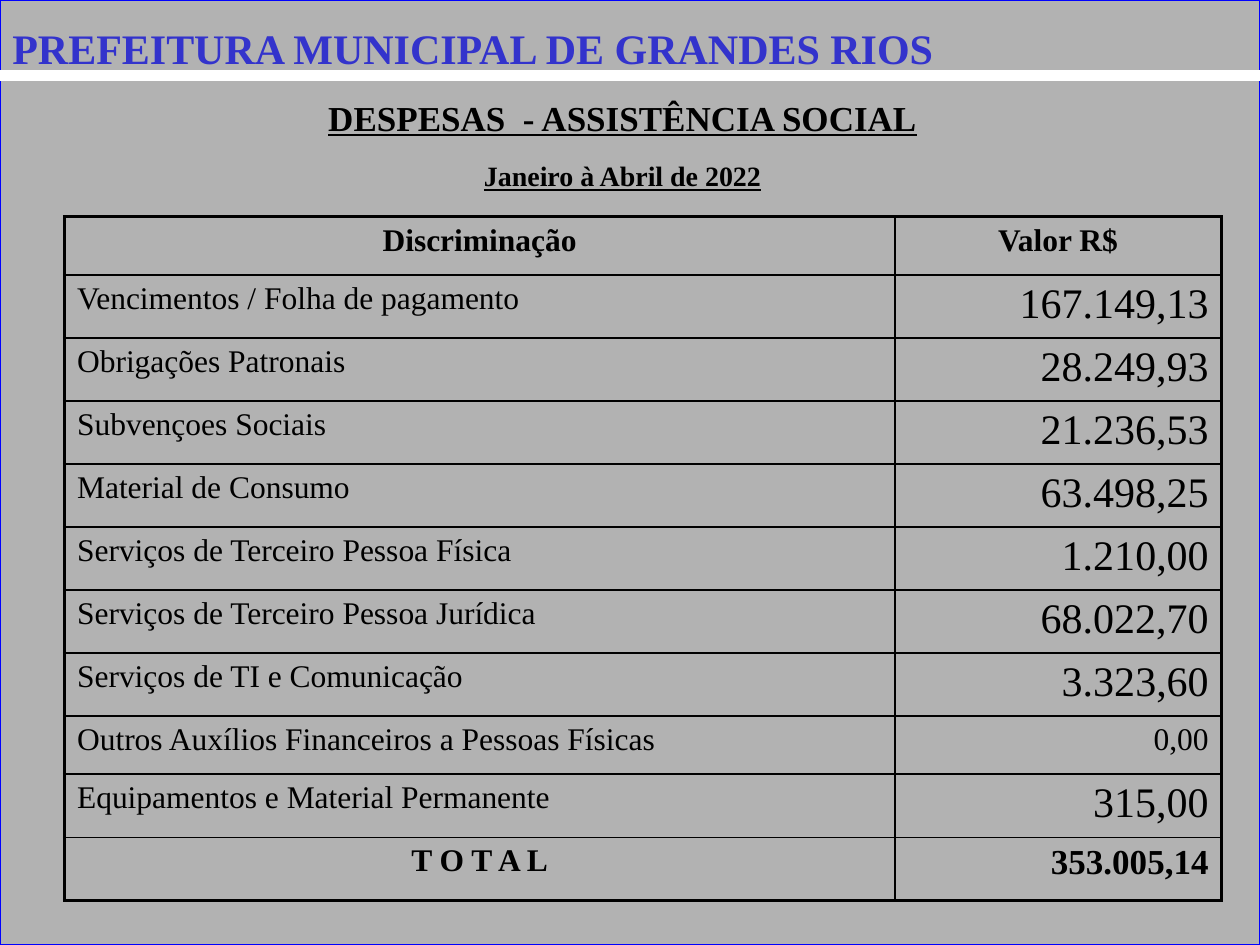
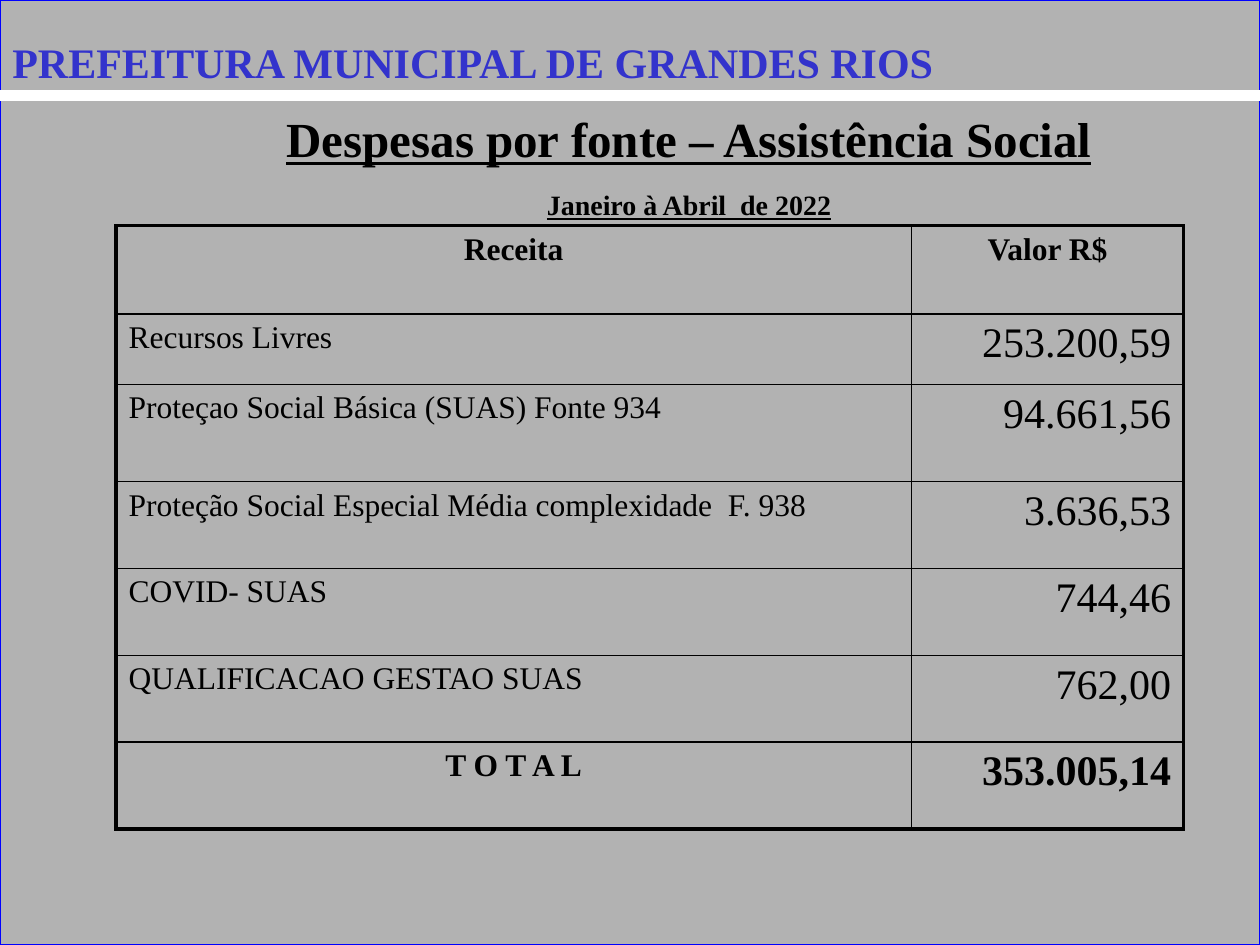
from lxml.etree import SubElement as Sub
from pptx import Presentation
from pptx.dml.color import RGBColor as RGB
from pptx.enum.shapes import MSO_CONNECTOR as LINK, MSO_SHAPE as SHAPE
from pptx.enum.text import MSO_ANCHOR as ANCHOR, MSO_AUTO_SIZE as FIT, PP_ALIGN as ALIGN
from pptx.oxml.ns import qn
from pptx.util import Cm, Pt

INK = {"page": "B2B2B2", "edge": "0000FF", "band": "FFFFFF",
       "town": "3333CC", "text": "000000"}
FONT = "Times New Roman"
WIDE, HIGH = Cm(25.4), Cm(19.05)
THICK, THIN = Pt(2.25), Pt(1)

# Rows hold label, value, value size and row height in cm.
PAGES = [
    {
        "town_top": 0.25, "band_top": 1.52,
        "head": ("DESPESAS  - ASSISTÊNCIA SOCIAL", "Janeiro à Abril de 2022"),
        "head_size": 20, "head_box": (2.29, 1.32, 20.52, 4.14),
        "grid_at": (1.3, 4.37), "cols": (16.74, 6.58),
        "rows": [
            ("Discriminação", "Valor R$", 18, 1.17),
            ("Vencimentos / Folha de pagamento", "167.149,13", 24, 1.27),
            ("Obrigações Patronais", "28.249,93", 24, 1.27),
            ("Subvençoes Sociais", "21.236,53", 24, 1.27),
            ("Material de Consumo", "63.498,25", 24, 1.27),
            ("Serviços de Terceiro Pessoa Física", "1.210,00", 24, 1.27),
            ("Serviços de Terceiro Pessoa Jurídica", "68.022,70", 24, 1.27),
            ("Serviços de TI e Comunicação", "3.323,60", 24, 1.27),
            ("Outros Auxílios Financeiros a Pessoas Físicas", "0,00", 18, 1.17),
            ("Equipamentos e Material Permanente", "315,00", 24, 1.27),
            ("T O T A L", "353.005,14", 20, 1.27),
        ],
    },
    {
        "town_top": 0.53, "band_top": 1.93,
        "head": ("Despesas por fonte – Assistência Social", "Janeiro à Abril  de 2022"),
        "head_size": 28, "head_box": (3.63, 1.4, 20.52, 14.76),
        "grid_at": (2.34, 4.55), "cols": (16.03, 5.49),
        "rows": [
            ("Receita", "Valor R$", 18, 1.78),
            ("Recursos Livres", "253.200,59", 24, 1.42),
            ("Proteçao Social Básica (SUAS) Fonte 934", "94.661,56", 24, 1.96),
            ("Proteção Social Especial Média complexidade  F. 938", "3.636,53", 24, 1.75),
            ("COVID- SUAS", "744,46", 24, 1.75),
            ("QUALIFICACAO GESTAO SUAS", "762,00", 24, 1.75),
            ("T O T A L", "353.005,14", 24, 1.75),
        ],
    },
]


def style(para, size, bold=True, line=False, ink="text"):
    for run in para.runs:
        font = run.font
        font.name, font.size = FONT, Pt(size)
        font.bold, font.underline = bold, line
        font.color.rgb = RGB.from_string(INK[ink])


def border(cell, sides):
    """Draw the cell borders, given as widths for left, right, top, bottom."""
    props = cell._tc.get_or_add_tcPr()
    for side, width in zip("LRTB", sides):
        edge = Sub(props, qn(f"a:ln{side}"), w=str(width))
        fill = Sub(edge, qn("a:solidFill"))
        Sub(fill, qn("a:srgbClr"), val=INK["text"])


prs = Presentation()
prs.slide_width, prs.slide_height = WIDE, HIGH

for page in PAGES:
    slide = prs.slides.add_slide(prs.slide_layouts[5])
    shapes = slide.shapes
    head = shapes.title

    # Grey page with a blue edge, behind the title
    back = shapes.add_shape(SHAPE.RECTANGLE, 0, 0, WIDE, HIGH)
    back.shadow.inherit = False
    back.fill.solid()
    back.fill.fore_color.rgb = RGB.from_string(INK["page"])
    back.line.color.rgb = RGB.from_string(INK["edge"])
    back.line.width = Pt(0.75)
    head._element.addprevious(back._element)

    # White band
    top = Cm(page["band_top"])
    band = shapes.add_connector(LINK.STRAIGHT, 0, top, WIDE, top)
    band.line.color.rgb = RGB.from_string(INK["band"])
    band.line.width = Pt(6)
    Sub(band._element.spPr, qn("a:effectLst"))

    # Town name with a text shadow
    town = shapes.add_textbox(0, Cm(page["town_top"]), Cm(24.1), Cm(1.27))
    frame = town.text_frame
    frame.word_wrap = True
    frame.margin_top = Cm(0.2)
    frame.text = "PREFEITURA MUNICIPAL DE GRANDES RIOS"
    para = frame.paragraphs[0]
    style(para, 24, ink="town")
    glow = Sub(para.runs[0].font._element, qn("a:effectLst"))
    para.runs[0].font.fill._xPr.find(qn("a:solidFill")).addnext(glow)
    cast = Sub(glow, qn("a:outerShdw"), dist="35921", dir="2700000")
    Sub(cast, qn("a:srgbClr"), val="808080")

    # Heading and period
    head.left, head.top, head.width, head.height = map(Cm, page["head_box"])
    frame = head.text_frame
    frame.word_wrap, frame.auto_size = True, FIT.NONE
    frame.vertical_anchor = ANCHOR.TOP
    frame.margin_top = Cm(0.2)
    frame.text = "\n".join(page["head"])
    for para, size in zip(frame.paragraphs, (page["head_size"], 16)):
        para.alignment = ALIGN.CENTER
        para.line_spacing = 1.5
        style(para, size, line=True)
    para.space_before = Pt(2)

    # Table of values
    rows, cols = page["rows"], page["cols"]
    left, top = map(Cm, page["grid_at"])
    high = sum(row[3] for row in rows)
    grid = shapes.add_table(len(rows), 2, left, top, Cm(sum(cols)), Cm(high)).table
    grid.first_row = grid.horz_banding = False
    for col, width in zip(grid.columns, cols):
        col.width = Cm(width)
    last = len(rows) - 1
    for i, (label, value, size, tall) in enumerate(rows):
        grid.rows[i].height = Cm(tall)
        ends = i in (0, last)
        for j, text in enumerate((label, value)):
            cell = grid.cell(i, j)
            border(cell, (THIN if j else THICK, THICK if j else THIN,
                          THIN if i else THICK, THICK if i == last else THIN))
            cell.fill.background()
            cell.text = text
            para = cell.text_frame.paragraphs[0]
            if i == 0 or (i == last and j == 0):
                para.alignment = ALIGN.CENTER
            else:
                para.alignment = ALIGN.RIGHT if j else ALIGN.LEFT
            style(para, size if j else 18, bold=ends)

prs.save("out.pptx")
